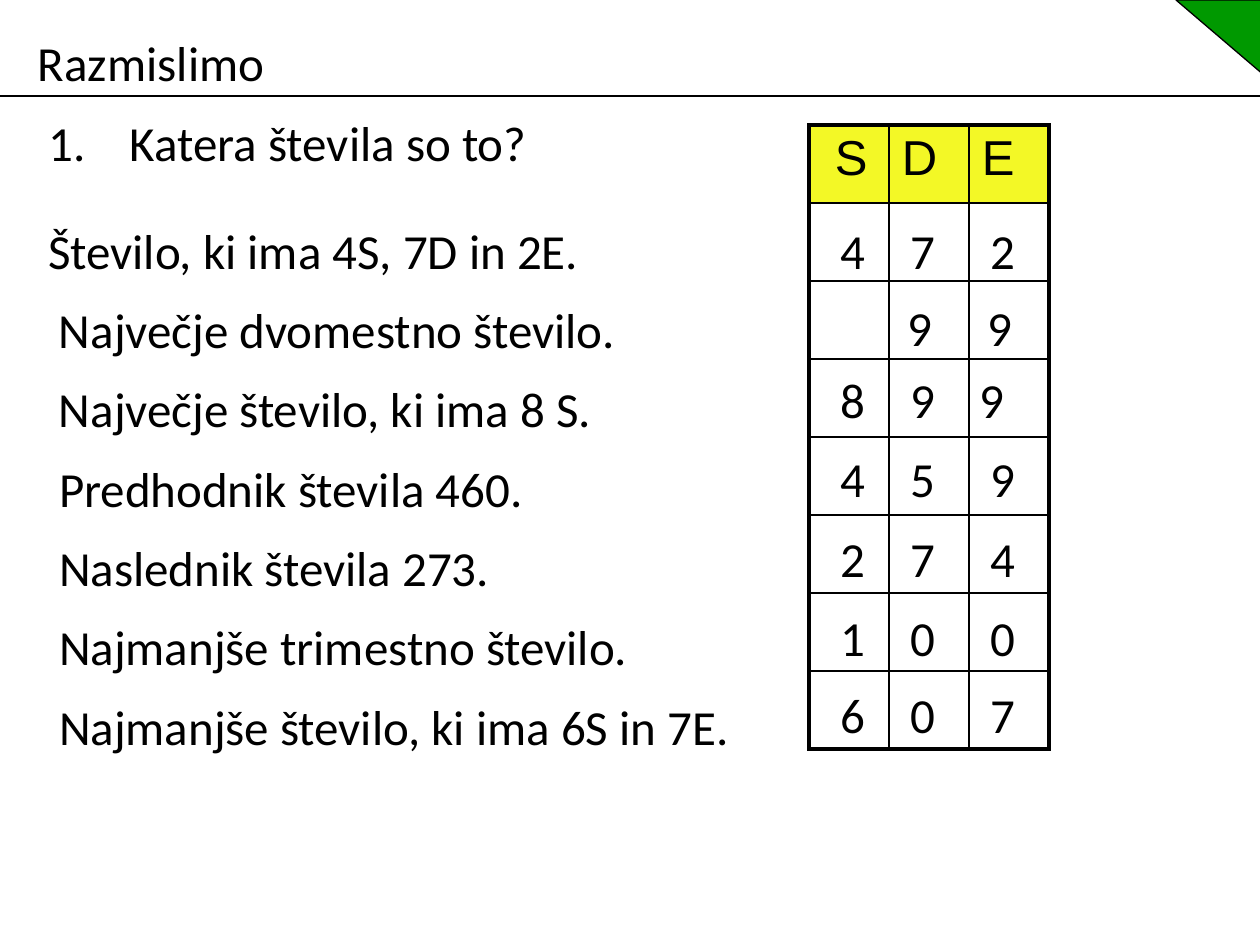
from dataclasses import dataclass

from lxml.etree import SubElement
from pptx import Presentation
from pptx.dml.color import RGBColor
from pptx.enum.shapes import MSO_CONNECTOR as Connector, MSO_SHAPE as Shape
from pptx.oxml.ns import qn
from pptx.util import Emu, Pt

PX = 914400 / 126


@dataclass(frozen=True)
class Theme:
    black: str = "000000"
    green: str = "009900"
    yellow: str = "F3F826"
    body_font: str = "Calibri"
    header_font: str = "Arial"
    size: int = 28
    thin: float = 0.75
    inner: float = 1
    outer: float = 2.25


THEME = Theme()
INSET = 13  # usual side inset of boxes and cells
INDENT = 24  # inset of text set one space further in

# Clue, its width
CLUES = [
    ("Število, ki ima 4S, 7D in 2E.", 625),
    ("Največje dvomestno število.", 704),
    ("Največje število, ki ima 8 S.", 655),
    ("Predhodnik števila 460.", 586),
    ("Naslednik števila 273.", 576),
    ("Najmanjše trimestno število.", 675),
    ("Najmanjše število, ki ima 6S in 7E.", 735),
]
# Digits, top, tab stops of the tens and units
ANSWERS = [
    ("4\t7\t2", 214, (70, 150)),
    ("\t9\t9", 291, (67, 147)),
    ("8\t9\t9", 363, (70, 139)),
    ("4\t5\t9", 442, (70, 150)),
    ("2\t7\t4", 522, (70, 150)),
    ("1\t0\t0", 601, (70, 150)),
    ("6\t0\t7", 678, (70, 150)),
]
HEADERS = ["S", "D", "E"]


def px(value):
    return Emu(round(value * PX))


def color(value):
    return RGBColor.from_string(value)


def write(para, text, font=THEME.body_font):
    span = para.add_run()
    span.text = text
    span.font.name = font
    span.font.size = Pt(THEME.size)
    span.font.color.rgb = color(THEME.black)


def add_text(page, text, left, top, width, height, inset=INSET, stops=()):
    box = page.shapes.add_textbox(px(left), px(top), px(width), px(height))
    frame = box.text_frame
    frame.word_wrap = True
    frame.margin_left = px(inset)
    para = frame.paragraphs[0]
    if stops:
        tabs = SubElement(para._p.get_or_add_pPr(), qn("a:tabLst"))
        for stop in stops:
            SubElement(tabs, qn("a:tab"), pos=str(px(stop)), algn="l")
    write(para, text)


def add_corner(page):
    corner = page.shapes.add_shape(Shape.RIGHT_TRIANGLE, px(1176), px(0), px(89), px(76))
    corner.rotation = 180
    corner.shadow.inherit = False
    corner.fill.solid()
    corner.fill.fore_color.rgb = color(THEME.green)
    corner.line.color.rgb = color(THEME.black)
    corner.line.width = Pt(THEME.thin)


def add_rule(page, top, width):
    rule = page.shapes.add_connector(Connector.STRAIGHT, px(0), px(top), px(width), px(top))
    rule.line.color.rgb = color(THEME.black)
    rule.line.width = Pt(THEME.thin)
    SubElement(rule._element.spPr, qn("a:effectLst"))


def set_borders(cell, outer_sides):
    """Draw all four borders, heavier on the table's outer edge."""
    props = cell._tc.get_or_add_tcPr()
    for place, (side, is_outer) in enumerate(outer_sides.items()):
        width = THEME.outer if is_outer else THEME.inner
        border = SubElement(props, qn(f"a:ln{side}"), w=str(Pt(width)))
        fill = SubElement(border, qn("a:solidFill"))
        SubElement(fill, qn("a:srgbClr"), val=THEME.black)
        props.insert(place, border)


def add_place_table(page, left, top, cell_width, cell_height):
    rows, columns = len(ANSWERS) + 1, len(HEADERS)
    table = page.shapes.add_table(
        rows, columns, px(left), px(top),
        px(cell_width * columns), px(cell_height * rows)).table
    table.first_row = table.horz_banding = False
    for column in table.columns:
        column.width = px(cell_width)
    for row_index, row in enumerate(table.rows):
        row.height = px(cell_height)
        for column_index, cell in enumerate(row.cells):
            if row_index == 0:
                cell.fill.solid()
                cell.fill.fore_color.rgb = color(THEME.yellow)
                cell.margin_left = px(26 if column_index == 0 else INSET)
                write(cell.text_frame.paragraphs[0], HEADERS[column_index], THEME.header_font)
            else:
                cell.fill.background()
            set_borders(cell, {
                "L": column_index == 0,
                "R": column_index == columns - 1,
                "T": row_index == 0,
                "B": row_index == rows - 1,
            })


def main():
    deck = Presentation()
    deck.slide_width, deck.slide_height = px(1260), px(945)
    page = deck.slides.add_slide(deck.slide_layouts[6])

    # Heading and question
    add_text(page, "Razmislimo", 25, 26, 882, 110)
    add_text(page, "1.\tKatera števila so to?", 25, 106, 1211, 79, INDENT, (81,))
    add_corner(page)
    add_rule(page, 96, 1260)

    # Place value table
    add_place_table(page, 809, 125, 80, 78)

    # Clues, evenly spaced
    for index, (clue, width) in enumerate(CLUES):
        top = 214 + index * 476 // 6
        add_text(page, clue, 35, top, width, 79, INDENT if index else INSET)

    # Answers over the table rows
    for digits, top, stops in ANSWERS:
        add_text(page, digits, 819, top, 228, 72, 22, stops)

    deck.save("out.pptx")


if __name__ == "__main__":
    main()
